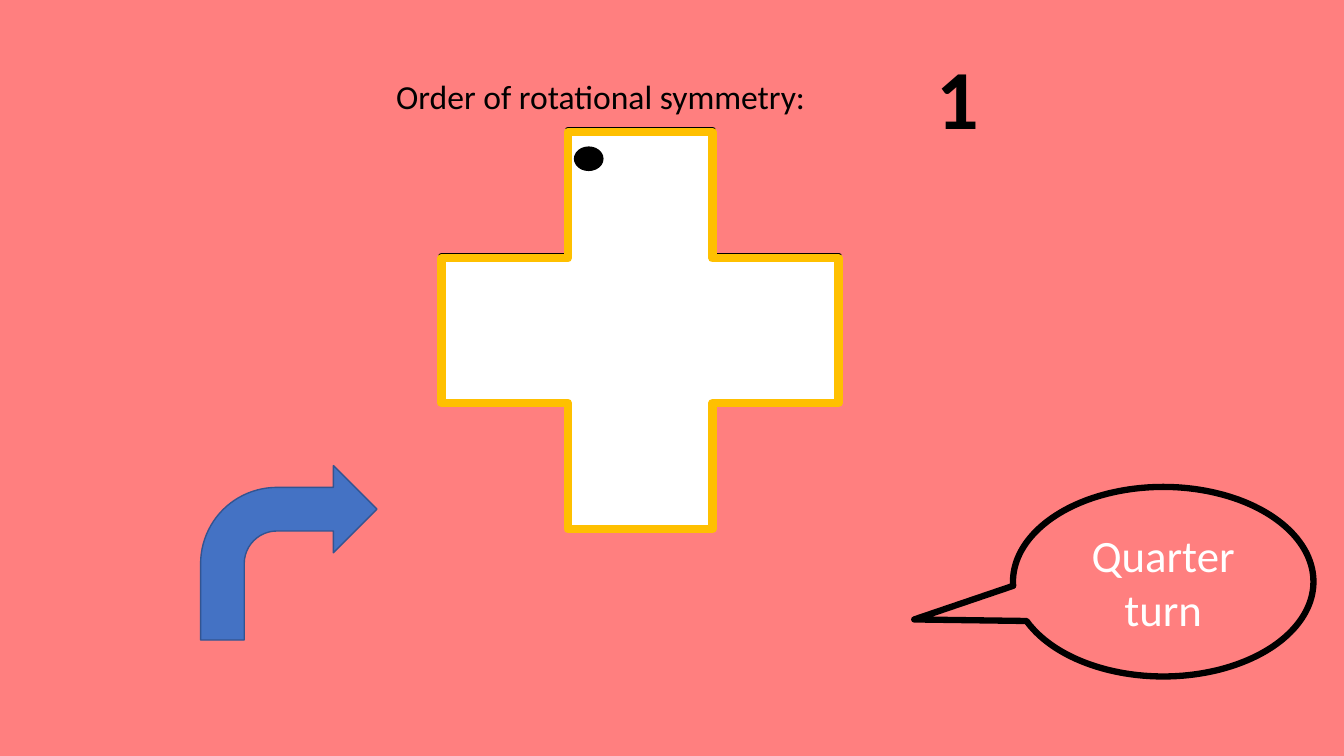
from dataclasses import dataclass

from pptx import Presentation
from pptx.dml.color import RGBColor
from pptx.enum.shapes import MSO_SHAPE as Preset
from pptx.enum.text import MSO_ANCHOR as Anchor, MSO_AUTO_SIZE as AutoSize, PP_ALIGN as Align
from pptx.shapes.autoshape import Shape
from pptx.util import Pt

BLACK = "000000"
WHITE = "FFFFFF"


@dataclass(frozen=True)
class Figure:
    preset: Preset
    left: float
    top: float
    width: float
    height: float
    fill: str | None
    line: str
    line_width: float
    adjustments: tuple[float, ...] = ()


def cross(top: float, line: str, line_width: float) -> Figure:
    return Figure(Preset.CROSS, 315.4, top, 283.7, 283.7, WHITE, line, line_width, (0.318,))


CROSS_BEHIND = cross(92.9, BLACK, 4.5)
MARKED_CROSS = (
    cross(94.3, "FFC000", 6),
    Figure(Preset.OVAL, 410.4, 105.1, 20.2, 16.6, BLACK, BLACK, 1),
)
TURN_CALLOUT = Figure(Preset.OVAL_CALLOUT, 723.6, 347.8, 214.6, 135.4,
                      None, BLACK, 4.5, (-0.829, 0.199))
TURN_ARROW = Figure(Preset.BENT_ARROW, 143.3, 332.6, 126, 124.6, "4472C4", "325491", 1)


def rgb(value: str) -> RGBColor:
    return RGBColor.from_string(value)


def draw(shapes, figure: Figure) -> Shape:
    shape = shapes.add_shape(figure.preset, Pt(figure.left), Pt(figure.top),
                             Pt(figure.width), Pt(figure.height))
    shape.shadow.inherit = False
    for index, value in enumerate(figure.adjustments):
        shape.adjustments[index] = value
    if figure.fill is None:
        shape.fill.background()
    else:
        shape.fill.solid()
        shape.fill.fore_color.rgb = rgb(figure.fill)
    shape.line.color.rgb = rgb(figure.line)
    shape.line.width = Pt(figure.line_width)
    return shape


def write(shape: Shape, text: str, size: float, color: str, bold: bool = False,
          align: Align = Align.LEFT, anchor: Anchor = Anchor.TOP) -> None:
    frame = shape.text_frame
    frame.text = text
    frame.word_wrap = True
    frame.auto_size = AutoSize.NONE
    frame.vertical_anchor = anchor
    paragraph = frame.paragraphs[0]
    paragraph.alignment = align
    font = paragraph.font
    font.name = "Calibri"
    font.size = Pt(size)
    font.bold = bold
    font.color.rgb = rgb(color)


def main() -> None:
    presentation = Presentation()
    presentation.slide_width, presentation.slide_height = Pt(960), Pt(540)
    slide = presentation.slides.add_slide(presentation.slide_layouts[5])
    background = slide.background.fill
    background.solid()
    background.fore_color.rgb = rgb("FF7F7F")

    title = slide.shapes.title
    title.left, title.top, title.width, title.height = Pt(275.8), Pt(50.4), Pt(385.2), Pt(36)
    write(title, "Order of rotational symmetry:", 24, BLACK)

    order = slide.shapes.add_textbox(Pt(661.7), Pt(28.8), Pt(76.3), Pt(79.9))
    write(order, "1", 60, BLACK, bold=True)

    draw(slide.shapes, CROSS_BEHIND)
    marked_cross = slide.shapes.add_group_shape()
    for figure in MARKED_CROSS:
        draw(marked_cross.shapes, figure)

    callout = draw(slide.shapes, TURN_CALLOUT)
    write(callout, "Quarter turn", 32, WHITE, align=Align.CENTER, anchor=Anchor.MIDDLE)
    draw(slide.shapes, TURN_ARROW)

    presentation.save("out.pptx")


if __name__ == "__main__":
    main()
